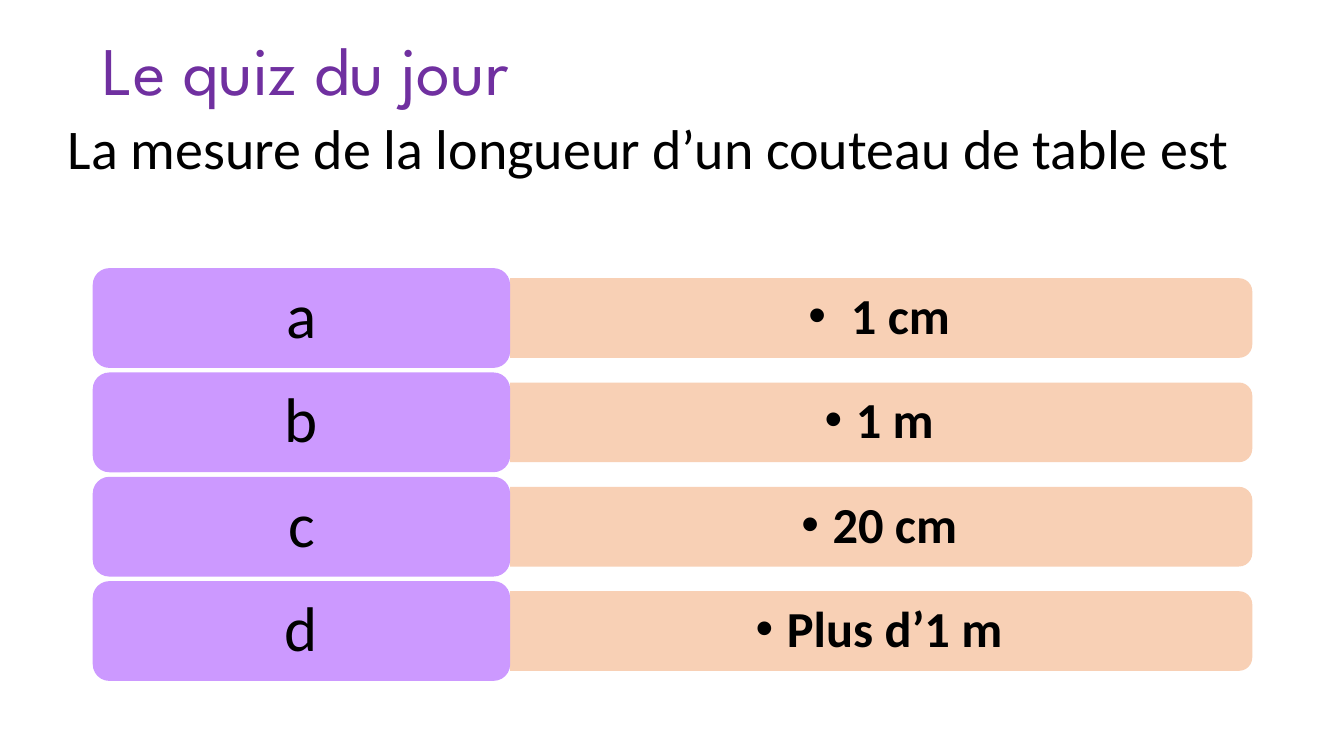
from lxml.etree import SubElement
from pptx import Presentation
from pptx.dml.color import RGBColor
from pptx.enum.shapes import MSO_SHAPE as Shape
from pptx.enum.text import MSO_ANCHOR as Anchor, PP_ALIGN as Align
from pptx.oxml.ns import qn
from pptx.util import Inches, Pt

TITLE = "Le quiz du jour"
QUESTION = "La mesure de la longueur d’un couteau de table est"
ANSWERS = [("a", " 1 cm"), ("b", "1 m"), ("c", "20 cm"), ("d", "Plus d’1 m")]

PURPLE = RGBColor(0x70, 0x30, 0xA0)
LILAC = RGBColor(0xCC, 0x99, 0xFF)
PEACH = RGBColor(0xF8, 0xCB, 0xAD)
BLACK = RGBColor(0, 0, 0)

LEFT, TOP, ROW_STEP = 0.92, 2.66, 1.035
LABEL_W, LABEL_H = 4.14, 0.99
BAR_W, BAR_H = 7.36, 0.79
ANSWER_W, ANSWER_H = 7.32, 0.71


def write(shape, text, size, font="Calibri", color=BLACK, bold=False,
          align=Align.CENTER, anchor=Anchor.MIDDLE, spacing=0.9, margins=(0.1, 0.05)):
    """Put one formatted paragraph in the shape and return it."""
    frame = shape.text_frame
    frame.word_wrap = True
    frame.vertical_anchor = anchor
    frame.margin_left = frame.margin_right = Inches(margins[0])
    frame.margin_top = frame.margin_bottom = Inches(margins[1])
    para = frame.paragraphs[0]
    para.alignment = align
    para.line_spacing = spacing
    span = para.add_run()
    span.text = text
    span.font.size = Pt(size)
    span.font.name = font
    span.font.bold = bold
    span.font.color.rgb = color
    return para


def add_box(page, left, top, width, height):
    return page.shapes.add_textbox(Inches(left), Inches(top), Inches(width), Inches(height))


def add_filled(page, kind, left, top, width, height, color):
    shape = page.shapes.add_shape(kind, Inches(left), Inches(top), Inches(width), Inches(height))
    shape.shadow.inherit = False
    shape.fill.solid()
    shape.fill.fore_color.rgb = color
    shape.line.fill.background()
    return shape


def add_bullet(para):
    props = para._p.get_or_add_pPr()
    props.set("marL", str(Inches(0.31)))
    props.set("indent", str(Inches(-0.31)))
    SubElement(props, qn("a:buFont")).set("typeface", "Arial")
    SubElement(props, qn("a:buChar")).set("char", "•")


def add_answer(page, top, letter, answer):
    middle = top + LABEL_H / 2
    bar_left = LEFT + LABEL_W

    # A quarter turn about the centre: width and height trade places.
    bar = add_filled(page, Shape.ROUND_2_SAME_RECTANGLE, bar_left + (BAR_W - BAR_H) / 2,
                     middle - BAR_W / 2, BAR_H, BAR_W, PEACH)
    bar.rotation = 90
    color = bar.fill._xPr.find(qn("a:solidFill"))[0]
    SubElement(color, qn("a:alpha")).set("val", "90000")

    box = add_box(page, bar_left, middle - ANSWER_H / 2, ANSWER_W, ANSWER_H)
    add_bullet(write(box, answer, 36, bold=True, margins=(0.15, 0.07)))

    label = add_filled(page, Shape.ROUNDED_RECTANGLE, LEFT, top, LABEL_W, LABEL_H, LILAC)
    write(label, letter, 45, margins=(0.19, 0.09))


def main():
    deck = Presentation()
    deck.slide_width, deck.slide_height = Inches(13.33), Inches(7.5)
    page = deck.slides.add_slide(deck.slide_layouts[6])

    write(add_box(page, LEFT, 0.27, 11.5, 0.91), TITLE, 48.6,
          font="League Spartan", color=PURPLE, align=Align.LEFT)
    for row, (letter, answer) in enumerate(ANSWERS):
        add_answer(page, TOP + row * ROW_STEP, letter, answer)
    write(add_box(page, 0.44, 1.08, 11.98, 0.77), QUESTION, 40,
          anchor=Anchor.TOP, spacing=1.0)

    deck.save("out.pptx")


if __name__ == "__main__":
    main()
